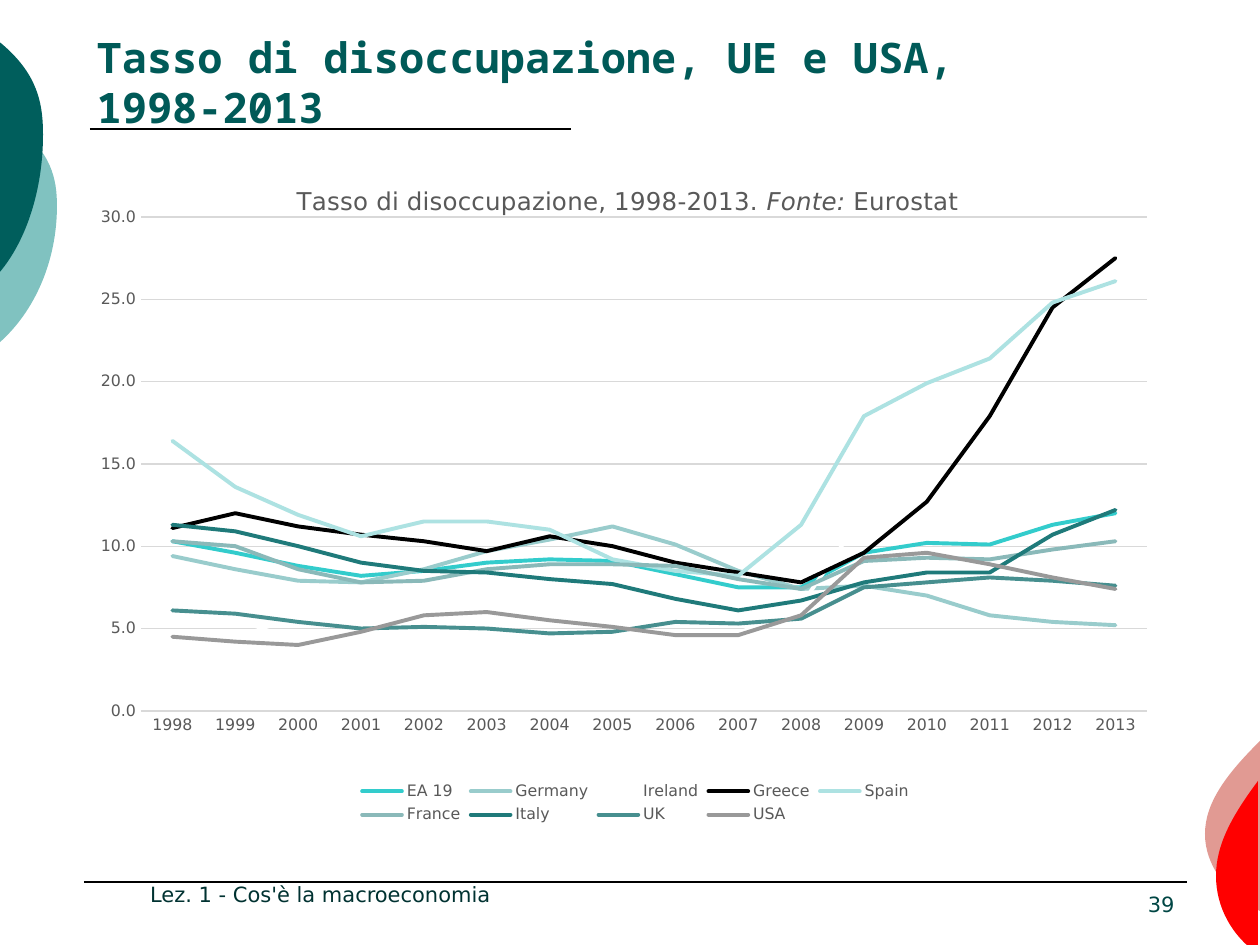
from lxml.etree import SubElement
from pptx import Presentation
from pptx.chart.data import CategoryChartData
from pptx.dml.color import RGBColor
from pptx.enum.chart import XL_CHART_TYPE, XL_LEGEND_POSITION, XL_TICK_MARK
from pptx.enum.shapes import MSO_CONNECTOR
from pptx.enum.text import MSO_ANCHOR, MSO_AUTO_SIZE, PP_ALIGN
from pptx.oxml import parse_xml
from pptx.oxml.ns import nsdecls, qn
from pptx.util import Emu, Pt

EMU_PER_PX = 914400 / 126
BODY_FONT = "DejaVu Sans"
TITLE_FONT = "Noto Sans Mono"
CHART_BOX = (95, 160, 1081, 669)
COLORS = {
    "title": "005A58", "footer": "003231", "number": "004644",
    "rule": "000000", "chart text": "595959", "grid": "D9D9D9",
    "light teal": "80C2C0", "dark teal": "005E5C",
    "pink": "E19A93", "red": "FF0000",
}
YEARS = [str(year) for year in range(1998, 2014)]
# Country: line colour, unemployment rate per year
RATES = {
    "EA 19": ("33CCCC", [10.3, 9.6, 8.8, 8.2, 8.5, 9, 9.2, 9.1,
                         8.3, 7.5, 7.5, 9.6, 10.2, 10.1, 11.3, 12]),
    "Germany": ("99CCCC", [9.4, 8.6, 7.9, 7.8, 8.6, 9.7, 10.4, 11.2,
                           10.1, 8.5, 7.4, 7.6, 7, 5.8, 5.4, 5.2]),
    "Ireland": ("FFFFFF", [7.5, 5.6, 4.2, 3.9, 4.5, 4.6, 4.5, 4.4,
                           4.5, 4.7, 6.4, 12, 13.9, 14.7, 14.7, 13.1]),
    "Greece": ("000000", [11.1, 12, 11.2, 10.7, 10.3, 9.7, 10.6, 10,
                          9, 8.4, 7.8, 9.6, 12.7, 17.9, 24.5, 27.5]),
    "Spain": ("ADE2E2", [16.4, 13.6, 11.9, 10.6, 11.5, 11.5, 11, 9.2,
                         8.5, 8.2, 11.3, 17.9, 19.9, 21.4, 24.8, 26.1]),
    "France": ("8AB9B9", [10.3, 10, 8.6, 7.8, 7.9, 8.6, 8.9, 8.9,
                          8.8, 8, 7.4, 9.1, 9.3, 9.2, 9.8, 10.3]),
    "Italy": ("1F7A7A", [11.3, 10.9, 10, 9, 8.5, 8.4, 8, 7.7,
                         6.8, 6.1, 6.7, 7.8, 8.4, 8.4, 10.7, 12.2]),
    "UK": ("478F8F", [6.1, 5.9, 5.4, 5, 5.1, 5, 4.7, 4.8,
                      5.4, 5.3, 5.6, 7.5, 7.8, 8.1, 7.9, 7.6]),
    "USA": ("999999", [4.5, 4.2, 4, 4.8, 5.8, 6, 5.5, 5.1,
                       4.6, 4.6, 5.8, 9.3, 9.6, 8.9, 8.1, 7.4]),
}


def px(length):
    return Emu(round(length * EMU_PER_PX))


def rgb(name):
    return RGBColor.from_string(COLORS[name])


def set_font(font, size, color, name=BODY_FONT, bold=False):
    font.name, font.size, font.bold = name, Pt(size), bold
    font.color.rgb = rgb(color)


def set_line(line, color, width):
    line.color.rgb = color
    line.width = Pt(width)


def add_edge_arc(slide, frame, edge, depth, top, bottom, color):
    """Draw the part of an ellipse in a frame that bulges in from a slide edge."""
    left, upper, width, height = frame
    half = (bottom - top) / 2
    shoulder, tip = edge + 0.62 * depth, edge + depth
    outline = [(edge, top), (shoulder, top + 0.23 * half), (tip, top + 0.6 * half),
               (tip, top + half), (tip, bottom - 0.6 * half),
               (shoulder, bottom - 0.23 * half), (edge, bottom)]
    points = [(px(x - left), px(y - upper)) for x, y in outline]
    builder = slide.shapes.build_freeform(*points[0])
    builder.add_line_segments([points[3], points[6]], close=True)
    shape = builder.convert_to_shape()
    shape.left, shape.top, shape.width, shape.height = map(px, frame)
    # Turn the straight segments into two Bézier curves
    outline_path = shape._element.find(".//" + qn("a:path"))
    outline_path.set("w", str(px(width)))
    outline_path.set("h", str(px(height)))
    segments = outline_path.findall(qn("a:lnTo"))
    for segment, curve in zip(segments, (points[1:4], points[4:7])):
        nodes = "".join(f'<a:pt x="{x}" y="{y}"/>' for x, y in curve)
        outline_path.replace(segment, parse_xml(
            f'<a:cubicBezTo {nsdecls("a")}>{nodes}</a:cubicBezTo>'))
    shape.shadow.inherit = False
    shape.fill.solid()
    shape.fill.fore_color.rgb = rgb(color)
    shape.line.fill.background()


def add_rule(slide, left, right, y, width):
    connector = slide.shapes.add_connector(
        MSO_CONNECTOR.STRAIGHT, px(left), px(y), px(right), px(y))
    set_line(connector.line, rgb("rule"), width)
    SubElement(connector._element.spPr, qn("a:effectLst"))


def add_label(slide, text, box, color, alignment):
    shape = slide.shapes.add_textbox(*map(px, box))
    frame = shape.text_frame
    frame.word_wrap = True
    frame.vertical_anchor = MSO_ANCHOR.BOTTOM
    paragraph = frame.paragraphs[0]
    paragraph.text = text
    paragraph.alignment = alignment
    set_font(paragraph.font, 12, color)


def fill_title(slide, text):
    title = slide.shapes.title
    title.left, title.top, title.width, title.height = map(px, (84, 66, 1008, 123))
    frame = title.text_frame
    frame.text = text
    frame.word_wrap = True
    frame.auto_size = MSO_AUTO_SIZE.NONE
    frame.vertical_anchor = MSO_ANCHOR.BOTTOM
    frame.margin_bottom = px(57)
    paragraph = frame.paragraphs[0]
    paragraph.alignment = PP_ALIGN.LEFT
    set_font(paragraph.font, 24, "title", TITLE_FONT, True)


def manual_layout(x, y, width=None, height=None):
    """Build a layout from px lengths inside the chart box."""
    chart_width, chart_height = CHART_BOX[2:]
    values = [("xMode", "edge"), ("yMode", "edge"),
              ("x", x / chart_width), ("y", y / chart_height)]
    if width:
        values = [("layoutTarget", "inner"), *values,
                  ("w", width / chart_width), ("h", height / chart_height)]
    items = "".join(f'<c:{tag} val="{value}"/>' for tag, value in values)
    return parse_xml(f'<c:layout {nsdecls("c")}><c:manualLayout>{items}'
                     "</c:manualLayout></c:layout>")


def place(element, layout, predecessor=None):
    """Put a layout into a chart element, replacing any other one."""
    for old in element.findall(qn("c:layout")):
        element.remove(old)
    if predecessor is None:
        element.insert(0, layout)
    else:
        predecessor.addnext(layout)


def format_chart_title(chart):
    paragraph = chart.chart_title.text_frame.paragraphs[0]
    set_font(paragraph.font, 14, "chart text")
    for text, italic in (("Tasso di disoccupazione, 1998-2013. ", False),
                         ("Fonte:", True), (" Eurostat", False)):
        run = paragraph.add_run()
        run.text = text
        set_font(run.font, 14, "chart text")
        run.font.italic = italic
    title = chart.chart_title._element
    place(title, manual_layout(198, 21), title.find(qn("c:tx")))


def format_axes(chart):
    for axis in (chart.category_axis, chart.value_axis):
        axis.major_tick_mark = axis.minor_tick_mark = XL_TICK_MARK.NONE
        set_font(axis.tick_labels.font, 9, "chart text")
    set_line(chart.category_axis.format.line, rgb("grid"), 0.75)
    values = chart.value_axis
    values.minimum_scale, values.maximum_scale, values.major_unit = 0, 30, 5
    values.format.line.fill.background()
    set_line(values.major_gridlines.format.line, rgb("grid"), 0.75)
    values.tick_labels.number_format = "#,##0.0"
    values.tick_labels.number_format_is_linked = False


def add_rate_chart(slide):
    data = CategoryChartData(number_format="0.0")
    data.categories = YEARS
    for country, (_, rates) in RATES.items():
        data.add_series(country, rates)
    chart = slide.shapes.add_chart(
        XL_CHART_TYPE.LINE, *map(px, CHART_BOX), data).chart
    set_font(chart.font, 10, "rule")
    format_chart_title(chart)
    format_axes(chart)
    chart.has_legend = True
    chart.legend.position = XL_LEGEND_POSITION.BOTTOM
    chart.legend.include_in_layout = False
    set_font(chart.legend.font, 9, "chart text")
    plot = chart.plots[0]
    plot.vary_by_categories = False
    for series, (color, _) in zip(plot.series, RATES.values()):
        series.smooth = False
        set_line(series.format.line, RGBColor.from_string(color), 2.25)
        series.format.line._ln.set("cap", "rnd")
    place(chart._chartSpace.chart.plotArea, manual_layout(46, 57, 1006, 494))


def main():
    presentation = Presentation()
    presentation.slide_width, presentation.slide_height = px(1260), px(945)
    slide = presentation.slides.add_slide(presentation.slide_layouts[5])
    # Edge decoration
    add_edge_arc(slide, (-213, 39, 271, 334), -1, 58, 69, 343, "light teal")
    add_edge_arc(slide, (-160, -34, 203, 336), -1, 44, -4, 273, "dark teal")
    add_edge_arc(slide, (1205, 741, 257, 186), 1260, -55, 757, 911, "pink")
    add_edge_arc(slide, (1216, 781, 193, 189), 1258, -42, 798, 954, "red")
    # Rules under the title and above the footer
    add_rule(slide, 90, 571, 129, 1)
    add_rule(slide, 84, 1187, 882, 0.75)
    # Title, footer and chart
    fill_title(slide, "Tasso di disoccupazione, UE e USA, 1998-2013")
    add_label(slide, "39", (1027, 860, 160, 63), "number", PP_ALIGN.RIGHT)
    add_label(slide, "Lez. 1 - Cos'è la macroeconomia", (53, 881, 535, 32),
              "footer", PP_ALIGN.CENTER)
    add_rate_chart(slide)
    presentation.save("out.pptx")


if __name__ == "__main__":
    main()
